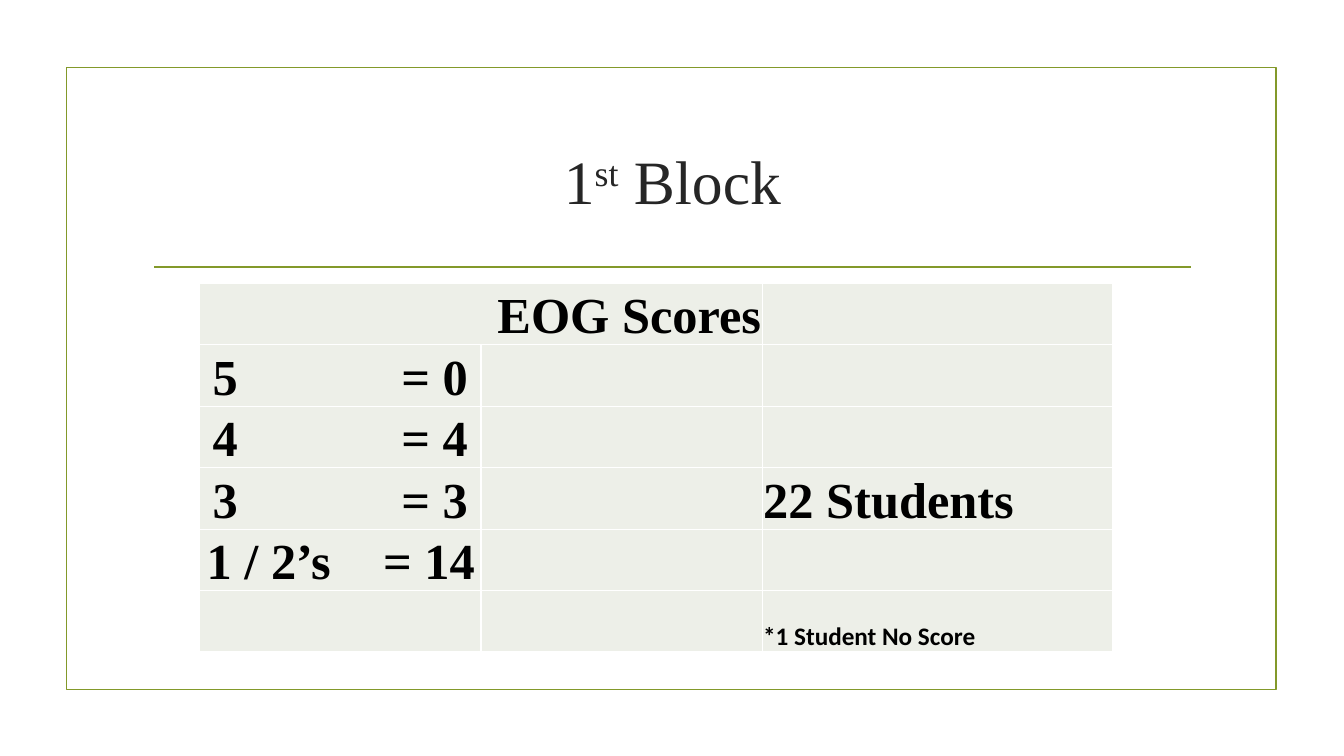
"""Build the 1st Block slide with its EOG score table."""
from dataclasses import dataclass

from lxml import etree
from pptx import Presentation
from pptx import util as u
from pptx.dml.color import RGBColor
from pptx.enum import shapes, text
from pptx.oxml.ns import qn


@dataclass(frozen=True)
class Theme:
    green: str = "83992A"
    title_ink: str = "262626"
    ink: str = "000000"
    cell: str = "EDEFE8"
    grid: str = "FFFFFF"
    serif: str = "Times New Roman"
    sans: str = "Calibri"
    title_size: int = 44
    score_size: int = 36
    note_size: int = 18


theme = Theme()


def format_run(run, font, size, color, bold=False):
    run.font.name = font
    run.font.size = u.Pt(size)
    run.font.bold = bold
    run.font.color.rgb = RGBColor.from_string(color)


def draw_borders(cell):
    properties = cell._tc.get_or_add_tcPr()
    for index, side in enumerate(("lnL", "lnR", "lnT", "lnB")):
        border = etree.Element(qn(f"a:{side}"), w=str(u.Pt(1)))
        paint = etree.SubElement(border, qn("a:solidFill"))
        etree.SubElement(paint, qn("a:srgbClr"), val=theme.grid)
        properties.insert(index, border)


deck = Presentation()
deck.slide_width = u.Inches(13.33)
deck.slide_height = u.Inches(7.5)
slide = deck.slides.add_slide(deck.slide_layouts[5])

frame = slide.shapes.add_shape(
    shapes.MSO_SHAPE.RECTANGLE, u.Inches(0.66), u.Inches(0.67), u.Inches(12), u.Inches(6.17))
frame.shadow.inherit = False
frame.fill.background()
rule = slide.shapes.add_connector(
    shapes.MSO_CONNECTOR.STRAIGHT, u.Inches(1.53), u.Inches(2.65), u.Inches(11.81), u.Inches(2.65))
etree.SubElement(rule._element.spPr, qn("a:effectLst"))
for outline in (frame.line, rule.line):
    outline.color.rgb = RGBColor.from_string(theme.green)
    outline.width = u.Pt(1.25)

title = slide.shapes.title
title.left, title.top = u.Inches(1.42), u.Inches(1.07)
title.width, title.height = u.Inches(10.5), u.Inches(1.43)
title.text_frame.vertical_anchor = text.MSO_ANCHOR.MIDDLE
heading = title.text_frame.paragraphs[0]
heading.alignment = text.PP_ALIGN.CENTER
for words, baseline in (("1", 0), ("st", 30000), (" Block", 0)):
    run = heading.add_run()
    run.text = words
    format_run(run, theme.serif, theme.title_size, theme.title_ink)
    run._r.get_or_add_rPr().set("baseline", str(baseline))

rows = [
    ["EOG Scores", "", ""],
    ["5\t= 0", "", ""],
    ["4\t= 4", "", ""],
    ["3\t= 3", "", "22 Students"],
    ["1 / 2’s\t= 14", "", ""],
    ["", "", "*1 Student No Score"],
]
column_widths = (2.79, 2.79, 3.48)
scores = slide.shapes.add_table(
    len(rows), len(column_widths), u.Inches(1.98), u.Inches(2.81),
    u.Inches(sum(column_widths)), u.Inches(3.66)).table
for column, width in zip(scores.columns, column_widths):
    column.width = u.Inches(width)
scores.cell(0, 0).merge(scores.cell(0, 1))

for row_index, row in enumerate(rows):
    for column_index, words in enumerate(row):
        cell = scores.cell(row_index, column_index)
        cell.fill.solid()
        cell.fill.fore_color.rgb = RGBColor.from_string(theme.cell)
        draw_borders(cell)
        if not words:
            continue
        cell.vertical_anchor = text.MSO_ANCHOR.BOTTOM
        cell.margin_left = cell.margin_right = cell.margin_top = u.Inches(0.01)
        cell.margin_bottom = 0
        cell.text_frame.text = words
        entry = cell.text_frame.paragraphs[0]
        entry.alignment = text.PP_ALIGN.RIGHT if row_index == 0 else text.PP_ALIGN.LEFT
        if "\t" in words:
            indent, tab = (0.07, 1.75) if "/" in words else (0.13, 1.87)
            cell.margin_left = u.Inches(indent)
            stops = etree.SubElement(entry._p.get_or_add_pPr(), qn("a:tabLst"))
            etree.SubElement(stops, qn("a:tab"), pos=str(u.Inches(tab)), algn="l")
        is_note = words.startswith("*")
        font = theme.sans if is_note else theme.serif
        size = theme.note_size if is_note else theme.score_size
        for run in entry.runs:
            format_run(run, font, size, theme.ink, bold=True)

deck.save("out.pptx")
